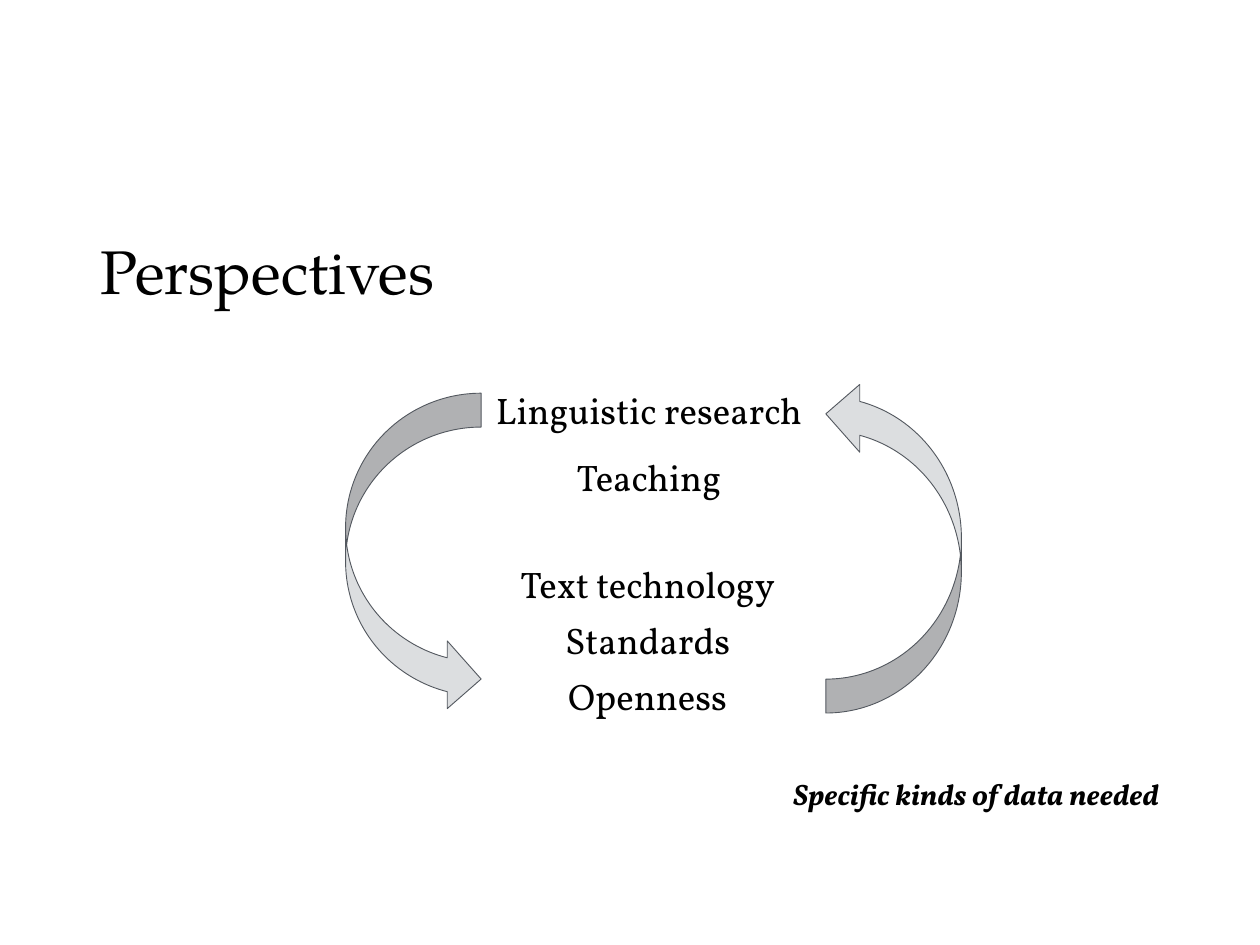
from collections import namedtuple

from lxml.etree import SubElement
from pptx import Presentation
from pptx.dml.color import RGBColor
from pptx.enum.shapes import MSO_SHAPE as Preset
from pptx.enum.text import MSO_ANCHOR as Anchor, MSO_AUTO_SIZE as AutoSize, PP_ALIGN as Align
from pptx.oxml.ns import qn
from pptx.util import Inches, Pt

WIDTH, HEIGHT = Inches(14.22), Inches(10.67)
COLUMN, ROW = WIDTH / 100, HEIGHT / 100
INSET = Inches(0.1)
BLACK, ARROW_FILL, ARROW_LINE = "000000", "DCDEE0", "53585F"
TITLE_FONT, TEXT_FONT = "TeX Gyre Pagella", "Vollkorn"

Box = namedtuple("Box", "left top width height")
TITLE_BOX = Box(7.31, 21.84, 85.37, 13.4)
CYCLE_BOX = Box(27.43, 37.77, 48.87, 45.45)
REMARK_BOX = Box(21.87, 83.97, 70.81, 9.75)

TITLE_FORMAT = {"alignment": Align.LEFT}
TOPIC_FORMAT = {"alignment": Align.CENTER, "line_spacing": 1.5}
LIST_FORMAT = {"alignment": Align.CENTER, "line_spacing": 0.1, "space_before": Pt(42)}
REMARK_FORMAT = {"alignment": Align.RIGHT, "line_spacing": 0.1}


def color(value):
    return RGBColor.from_string(value)


def set_format(target, values):
    for name, value in values.items():
        setattr(target, name, value)


def emu(box):
    return [round(length) for length in (
        box.left * COLUMN, box.top * ROW, box.width * COLUMN, box.height * ROW)]


def place(shape, box):
    set_format(shape, dict(zip(box._fields, emu(box))))


def write(shape, lines, paragraph_format, font_format, anchor=Anchor.TOP):
    frame = shape.text_frame
    set_format(frame, {
        "text": "\n".join(lines), "word_wrap": True, "auto_size": AutoSize.NONE,
        "vertical_anchor": anchor, "margin_left": INSET, "margin_right": INSET,
        "margin_top": INSET, "margin_bottom": INSET})
    for number, paragraph in enumerate(frame.paragraphs):
        properties = paragraph._p.get_or_add_pPr()
        set_format_xml = {"marL": "0", "indent": "0"}
        properties.attrib.update(set_format_xml)
        SubElement(properties, qn("a:buNone"))
        set_format(paragraph, paragraph_format)
        if number == 0:
            paragraph.space_before = Pt(0)
        set_format(paragraph.font, font_format)
        paragraph.font.color.rgb = color(BLACK)


def add_title(slide, box):
    place(slide.shapes.title, box)
    write(slide.shapes.title, ["Perspectives"], TITLE_FORMAT,
          {"name": TITLE_FONT, "size": Pt(50)}, Anchor.MIDDLE)


def add_arrow(slide, box, rotation):
    arrow = slide.shapes.add_shape(Preset.CURVED_RIGHT_ARROW, *emu(box))
    arrow.shadow.inherit = False
    arrow.rotation = rotation
    arrow.fill.solid()
    arrow.fill.fore_color.rgb = color(ARROW_FILL)
    arrow.line.color.rgb = color(ARROW_LINE)
    arrow.line.width = Pt(0.75)


def add_cycle(slide, box):
    font_format = {"name": TEXT_FONT, "size": Pt(30)}
    needs = slide.placeholders[1]
    place(needs, Box(box.left + 12.58, box.top + 24.27, 22.78, 21.18))
    write(needs, ["Text technology", "Standards", "Openness"], LIST_FORMAT, font_format)

    topics = slide.shapes.add_textbox(*emu(Box(box.left + 9.98, box.top, 28.2, 12.46)))
    write(topics, ["Linguistic research", "Teaching"], TOPIC_FORMAT, font_format)

    arrow_width = 10.76
    right = box.left + box.width - arrow_width
    add_arrow(slide, Box(box.left, box.top + 3.84, arrow_width, 33.83), 0)
    add_arrow(slide, Box(right, box.top + 2.44, arrow_width, 35.24), 180)


def add_remark(slide, box):
    remark = slide.shapes.add_textbox(*emu(box))
    write(remark, ["Specific kinds of data needed"], REMARK_FORMAT,
          {"name": TEXT_FONT, "size": Pt(24), "bold": True, "italic": True})


def main():
    presentation = Presentation()
    set_format(presentation, {"slide_width": WIDTH, "slide_height": HEIGHT})
    slide = presentation.slides.add_slide(presentation.slide_layouts[1])
    add_title(slide, TITLE_BOX)
    add_cycle(slide, CYCLE_BOX)
    add_remark(slide, REMARK_BOX)
    presentation.save("out.pptx")


if __name__ == "__main__":
    main()
